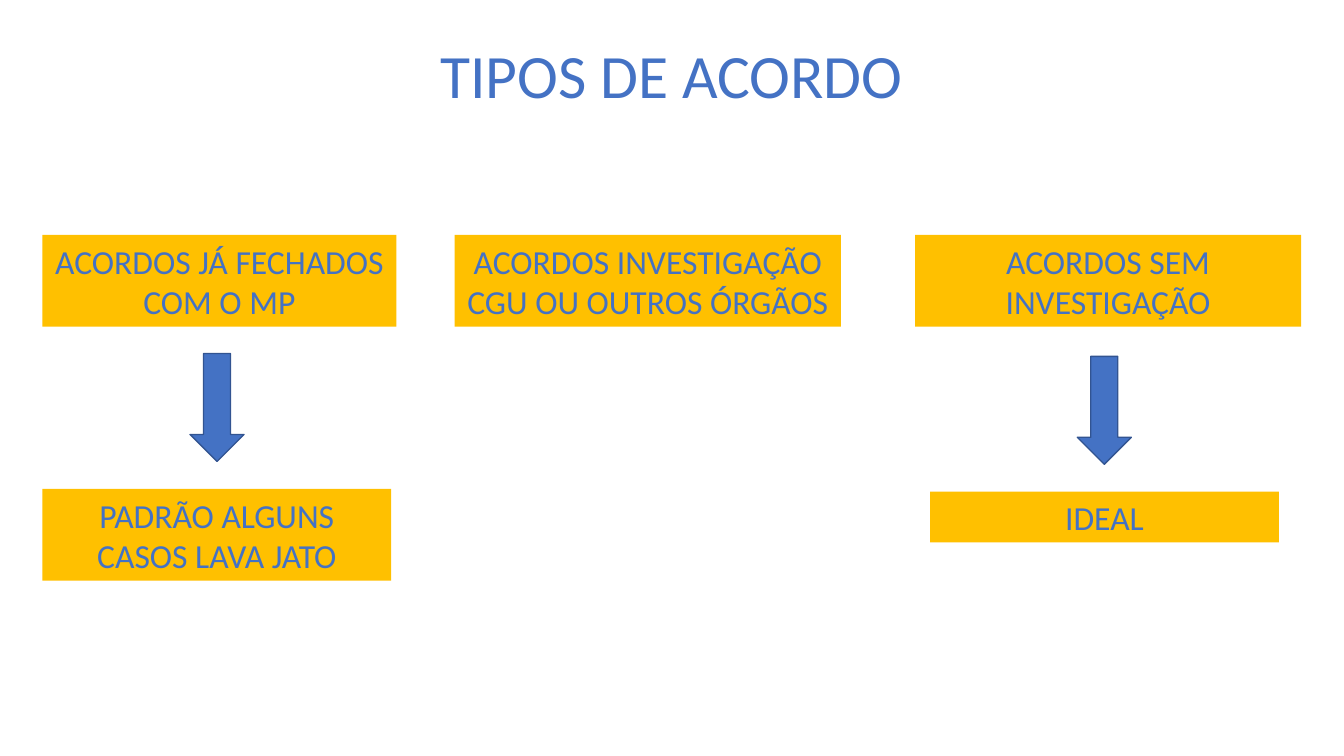
from dataclasses import dataclass

from pptx import Presentation
from pptx.dml.color import RGBColor as RGB
from pptx.enum.shapes import MSO_SHAPE as Shape
from pptx.enum.text import MSO_ANCHOR as Anchor, MSO_AUTO_SIZE as AutoSize, PP_ALIGN as Align
from pptx.util import Cm, Pt


@dataclass(frozen=True)
class Theme:
    font: str = "Calibri"
    blue: RGB = RGB(0x44, 0x72, 0xC4)
    outline: RGB = RGB(0x32, 0x54, 0x91)
    amber: RGB = RGB(0xFF, 0xC0, 0x00)
    title_size: Pt = Pt(44)
    box_size: Pt = Pt(24)
    line_width: Pt = Pt(1)


class SlideBuilder:
    def __init__(self, slide, theme):
        self.slide = slide
        self.theme = theme

    def label(self, s, text, size):
        tf = s.text_frame
        tf.word_wrap = True
        tf.vertical_anchor = Anchor.MIDDLE
        p = tf.paragraphs[0]
        p.text = text
        p.alignment = Align.CENTER
        p.font.name = self.theme.font
        p.font.size = size
        p.font.color.rgb = self.theme.blue

    def title(self, text, x, y, w, h):
        s = self.slide.shapes.add_textbox(Cm(x), Cm(y), Cm(w), Cm(h))
        self.label(s, text, self.theme.title_size)

    def shape(self, kind, fill, x, y, w, h):
        s = self.slide.shapes.add_shape(kind, Cm(x), Cm(y), Cm(w), Cm(h))
        s.shadow.inherit = False
        s.fill.solid()
        s.fill.fore_color.rgb = fill
        return s

    def box(self, text, x, y, w, h):
        s = self.shape(Shape.RECTANGLE, self.theme.amber, x, y, w, h)
        s.line.fill.background()
        self.label(s, text, self.theme.box_size)
        s.text_frame.auto_size = AutoSize.SHAPE_TO_FIT_TEXT

    def down_arrow(self, x, y):
        s = self.shape(Shape.DOWN_ARROW, self.theme.blue, x, y, 1.36, 2.72)
        s.line.color.rgb = self.theme.outline
        s.line.width = self.theme.line_width


def main():
    prs = Presentation()
    prs.slide_width, prs.slide_height = Cm(33.87), Cm(19.05)
    builder = SlideBuilder(prs.slides.add_slide(prs.slide_layouts[6]), Theme())

    builder.title("TIPOS DE ACORDO", 5.23, 0.66, 23.4, 2.39)

    agreements_y, two_lines, one_line = 5.92, 2.31, 1.28
    for text, x, w in (
        ("ACORDOS JÁ FECHADOS COM O MP", 1.07, 8.92),
        ("ACORDOS INVESTIGAÇÃO CGU OU OUTROS ÓRGÃOS", 11.46, 9.73),
        ("ACORDOS SEM INVESTIGAÇÃO", 23.06, 9.73),
    ):
        builder.box(text, x, agreements_y, w, two_lines)

    arrow_to_box = 3.41
    for text, x, arrow_x, arrow_y, h in (
        ("PADRÃO ALGUNS CASOS LAVA JATO", 1.07, 4.79, 8.91, two_lines),
        ("IDEAL", 23.44, 27.15, 8.98, one_line),
    ):
        builder.down_arrow(arrow_x, arrow_y)
        builder.box(text, x, arrow_y + arrow_to_box, 8.79, h)

    prs.save("out.pptx")


if __name__ == "__main__":
    main()
